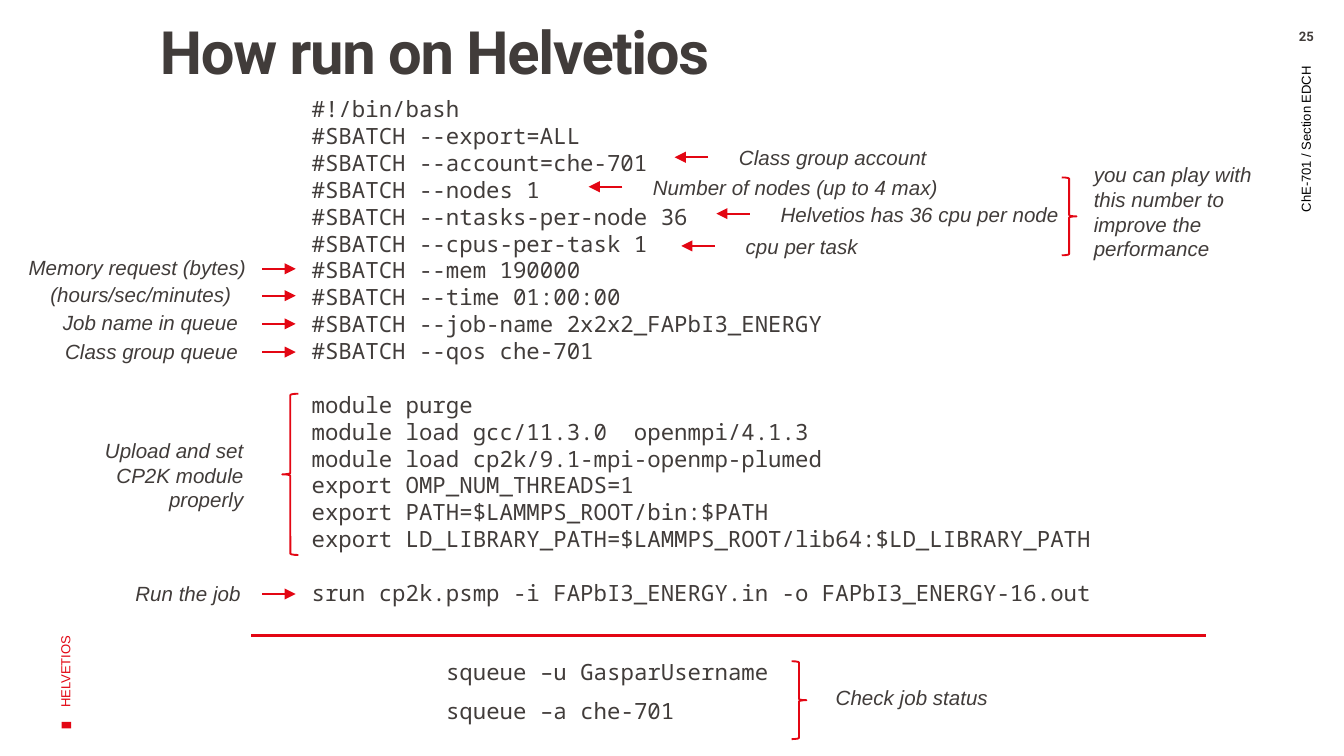
from collections import namedtuple

from lxml import etree
from pptx import Presentation
from pptx.dml.color import RGBColor
from pptx.enum.shapes import MSO_CONNECTOR as Connector, MSO_SHAPE as Shape
from pptx.enum.text import MSO_ANCHOR as Anchor, MSO_AUTO_SIZE as AutoSize, PP_ALIGN as Align
from pptx.oxml.ns import qn
from pptx.util import Inches, Pt

RED = RGBColor(0xE3, 0x06, 0x13)
INK = RGBColor(0x41, 0x3C, 0x3A)
BLACK = RGBColor(0, 0, 0)
MONO = "Noto Sans Mono"
CODE_LINE = Pt(14.4)
LABEL_HEIGHT = 0.29
SLIDE_WIDTH = 10
SLIDE_HEIGHT = SLIDE_WIDTH * 9 / 16

Box = namedtuple("Box", "left top width height")

CODE_BLOCKS = [
    [
        "#!/bin/bash",
        "#SBATCH --export=ALL",
        "#SBATCH --account=che-701",
        "#SBATCH --nodes 1",
        "#SBATCH --ntasks-per-node 36",
        "#SBATCH --cpus-per-task 1",
        "#SBATCH --mem 190000",
        "#SBATCH --time 01:00:00",
        "#SBATCH --job-name 2x2x2_FAPbI3_ENERGY",
        "#SBATCH --qos che-701",
    ],
    [
        "module purge",
        "module load gcc/11.3.0  openmpi/4.1.3",
        "module load cp2k/9.1-mpi-openmp-plumed",
        "export OMP_NUM_THREADS=1",
        "export PATH=$LAMMPS_ROOT/bin:$PATH",
        "export LD_LIBRARY_PATH=$LAMMPS_ROOT/lib64:$LD_LIBRARY_PATH",
    ],
    ["srun cp2k.psmp -i FAPbI3_ENERGY.in -o FAPbI3_ENERGY-16.out"],
]
RIGHT_NOTES = [
    ("Class group account", 2.8, 0.51),
    ("Number of nodes (up to 4 max)", 2.16, 0.73),
    ("Helvetios has 36 cpu per node", 3.11, 0.93),
    ("cpu per task", 2.85, 1.17),
]
LEFT_NOTES = [
    ("Memory request (bytes)", 1.93, 2),
    ("(hours/sec/minutes)", 1.82, 2.2),
    ("Job name in queue", 1.87, 2.41),
    ("Class group queue", 1.87, 2.62),
    ("Run the job", 1.89, 4.42),
]


def format_paragraph(paragraph, text, size=11, font="Arial", color=INK,
                     bold=False, italic=False, align=Align.LEFT):
    run = paragraph.add_run()
    run.text = text
    run.font.size = Pt(size)
    run.font.name = font
    run.font.bold = bold
    run.font.italic = italic
    run.font.color.rgb = color
    paragraph.alignment = align
    return run


def add_text(slide, box, text, rotation=0, anchor=Anchor.TOP, **formatting):
    shape = slide.shapes.add_textbox(*map(Inches, box))
    shape.rotation = rotation
    frame = shape.text_frame
    frame.word_wrap = True
    frame.vertical_anchor = anchor
    format_paragraph(frame.paragraphs[0], text, **formatting)
    return frame


def add_note(slide, box, text, align=Align.LEFT):
    add_text(slide, box, text, italic=True, align=align)


def add_line(slide, start, end, width=1, arrow=False):
    points = [Inches(value) for value in (*start, *end)]
    line = slide.shapes.add_connector(Connector.STRAIGHT, *points)
    line.line.color.rgb = RED
    line.line.width = Pt(width)
    if arrow:
        outline = line.line._get_or_add_ln()
        etree.SubElement(outline, qn("a:tailEnd"), type="triangle")
    etree.SubElement(line._element.spPr, qn("a:effectLst"))


def add_brace(slide, box, kind=Shape.RIGHT_BRACE):
    brace = slide.shapes.add_shape(kind, *map(Inches, box))
    brace.shadow.inherit = False
    brace.fill.background()
    brace.line.color.rgb = RED
    brace.line.width = Pt(1)


def add_title(slide, box, text):
    title = slide.shapes.title
    title.left, title.top, title.width, title.height = map(Inches, box)
    frame = title.text_frame
    frame.auto_size = AutoSize.NONE
    frame.word_wrap = True
    frame.vertical_anchor = Anchor.TOP
    frame.margin_left, frame.margin_right = Inches(0.2), Inches(0.08)
    frame.margin_top, frame.margin_bottom = 0, Inches(0.05)
    paragraph = frame.paragraphs[0]
    paragraph.line_spacing = 0.8
    run = format_paragraph(paragraph, text, size=32, font="Roboto", bold=True)
    run.font._element.set("spc", "-70")


def add_margins(slide, box):
    number = add_text(slide, Box(box.left + box.width - 0.56, box.top + 0.21, 0.56, 0.18),
                      "25", size=7, font="Roboto", bold=True, align=Align.CENTER)
    number.margin_top = number.margin_bottom = 0
    add_text(slide, Box(box.left + 7.78, box.top + 2.05, 3.87, 0.56), "ChE-701 / Section EDCH",
             rotation=270, anchor=Anchor.MIDDLE, size=7, color=BLACK, align=Align.RIGHT)
    add_text(slide, Box(box.left - 1.34, box.top + 3.04, 3.65, 1), "HELVETIOS",
             rotation=270, anchor=Anchor.MIDDLE, size=7, color=RED)
    marker = slide.shapes.add_shape(Shape.RECTANGLE, Inches(box.left + 0.47),
                                    Inches(box.top + 5.36), Inches(0.05), Inches(0.07))
    marker.rotation = 270
    marker.shadow.inherit = False
    marker.fill.solid()
    marker.fill.fore_color.rgb = RED
    marker.line.fill.background()


def add_code(slide, box):
    first_block, *other_blocks = CODE_BLOCKS
    frame = add_text(slide, box, first_block[0], size=12, font=MONO)
    for line in first_block[1:]:
        format_paragraph(frame.add_paragraph(), line, size=12, font=MONO)
    for block in other_blocks:
        for index, line in enumerate(block):
            paragraph = frame.add_paragraph()
            if index == 0:
                paragraph.space_before = CODE_LINE
            format_paragraph(paragraph, line, size=12, font=MONO)


def add_right_notes(slide, box):
    for text, offset, drop in RIGHT_NOTES:
        tip, middle = box.left + offset, box.top + drop
        add_line(slide, (tip + 0.25, middle), (tip, middle), arrow=True)
        add_note(slide, Box(tip + 0.38, middle - 0.14, 3.27, LABEL_HEIGHT), text)
    add_brace(slide, Box(box.left + 5.68, box.top + 0.66, 0.11, 0.58))
    add_note(slide, Box(box.left + 5.82, box.top + 0.5, 1.57, 0.84),
             "you can play with this number to improve the performance")


def add_left_notes(slide, box):
    tip = box.left + box.width
    for text, right, drop in LEFT_NOTES:
        middle = box.top + drop
        add_line(slide, (tip - 0.25, middle), (tip, middle), arrow=True)
        add_note(slide, Box(box.left + right - 1.87, middle - 0.15, 1.87, LABEL_HEIGHT),
                 text, Align.RIGHT)
    add_brace(slide, Box(tip - 0.1, box.top + 2.93, 0.12, 1.2), Shape.LEFT_BRACE)
    add_note(slide, Box(box.left + 0.34, box.top + 3.21, 1.57, 0.66),
             "Upload and set CP2K module properly", Align.RIGHT)


def add_status(slide, box):
    add_line(slide, (box.left, box.top), (box.left + box.width, box.top), width=1.5)
    for index, command in enumerate(["squeue –u GasparUsername", "squeue –a che-701"]):
        add_text(slide, Box(box.left + 1.35, box.top + 0.12 + 0.29 * index, 5.12, 0.3),
                 command, size=12, font=MONO)
    add_brace(slide, Box(box.left + 4.02, box.top + 0.19, 0.11, 0.58))
    add_note(slide, Box(box.left + 4.25, box.top + 0.32, 1.57, LABEL_HEIGHT), "Check job status")


def main():
    presentation = Presentation()
    presentation.slide_width = Inches(SLIDE_WIDTH)
    presentation.slide_height = Inches(SLIDE_HEIGHT)
    slide = presentation.slides.add_slide(presentation.slide_layouts[5])
    code_box = Box(2.22, 0.66, 6.25, 3.94)
    add_margins(slide, Box(0, 0, SLIDE_WIDTH, SLIDE_HEIGHT))
    add_title(slide, Box(0.99, 0.21, 6.84, 0.52), "How run on Helvetios")
    add_code(slide, code_box)
    add_right_notes(slide, code_box)
    add_left_notes(slide, Box(0, 0, 2.2, 4.6))
    add_status(slide, Box(1.87, 4.73, 7.1, 0.89))
    presentation.save("out.pptx")


if __name__ == "__main__":
    main()
